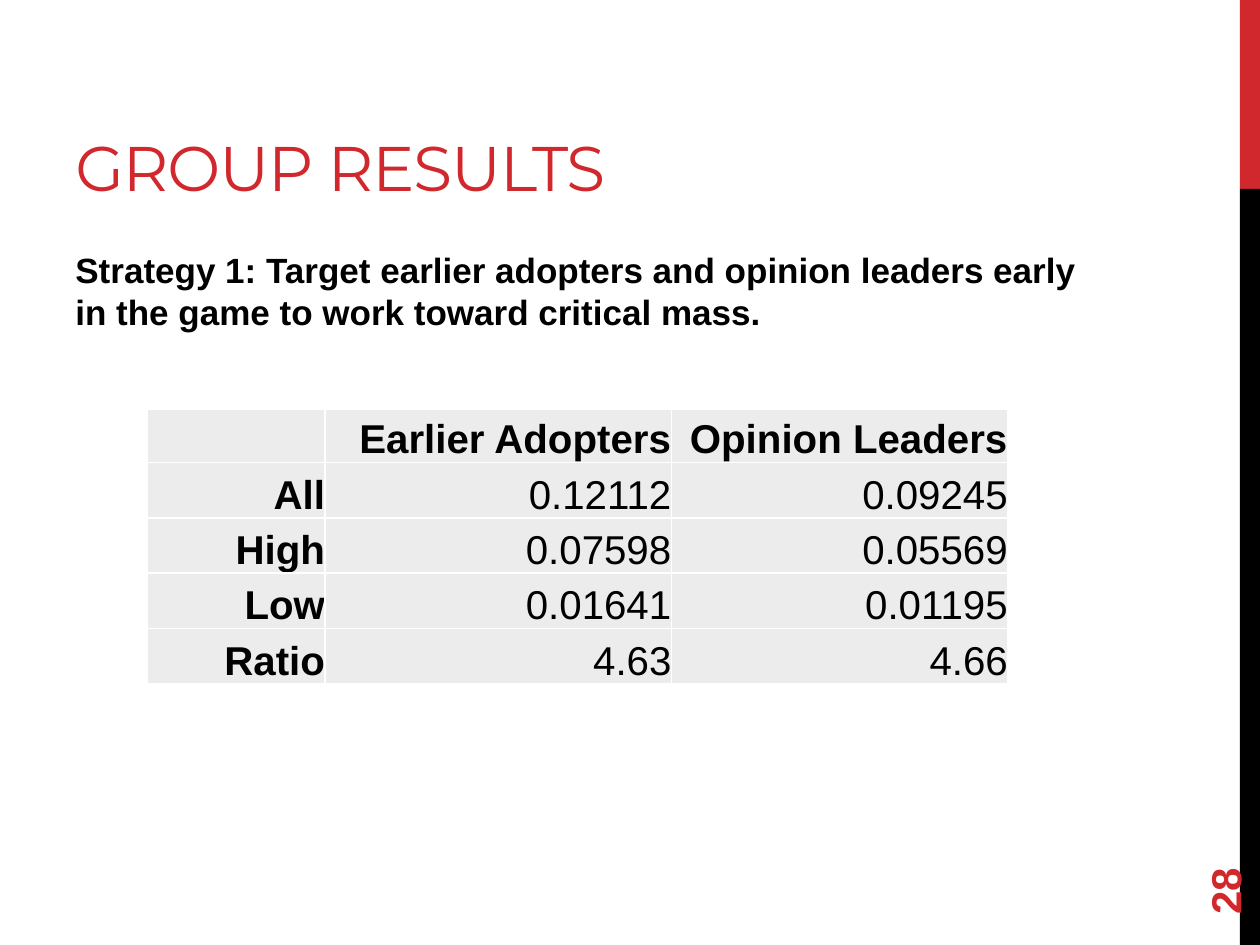
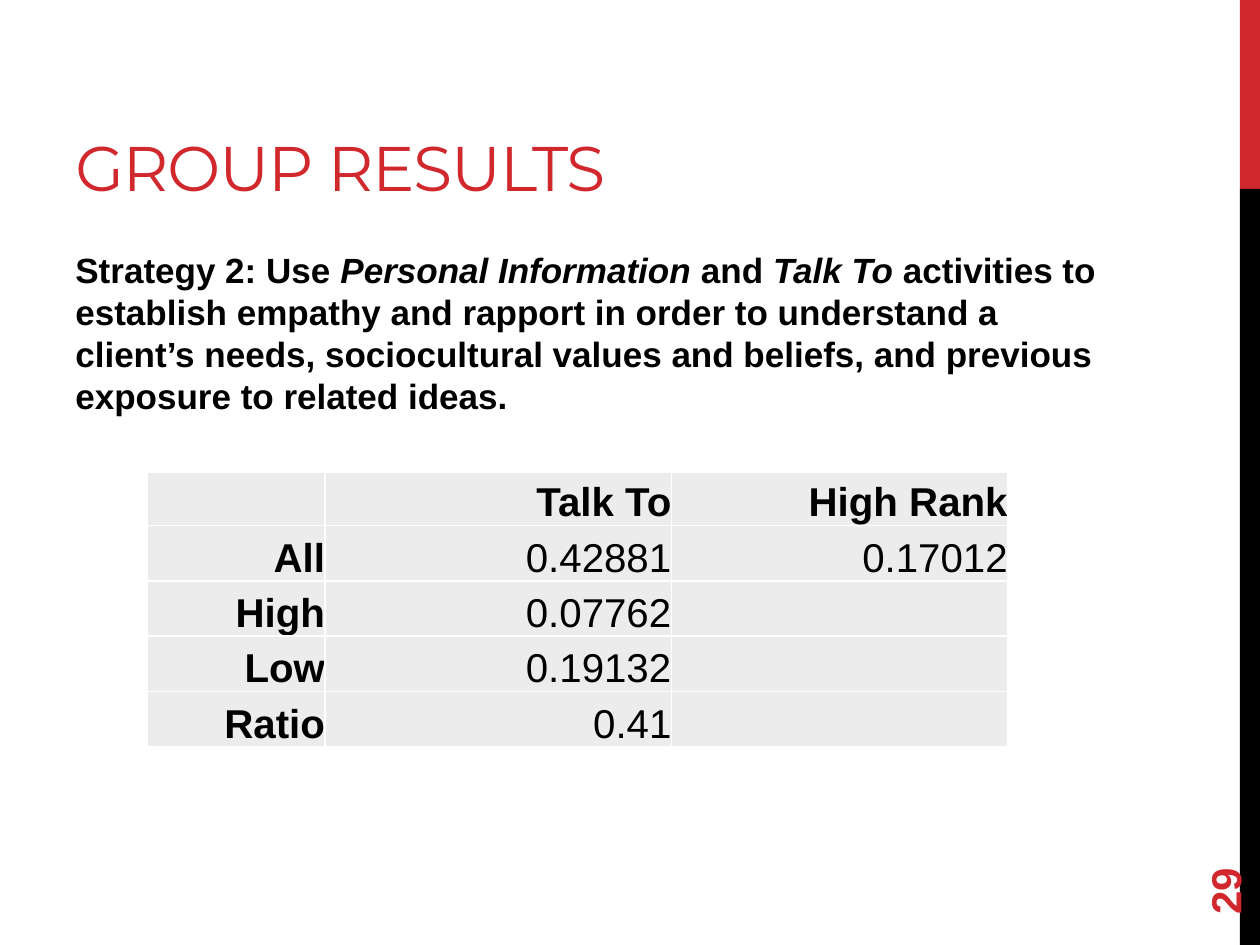
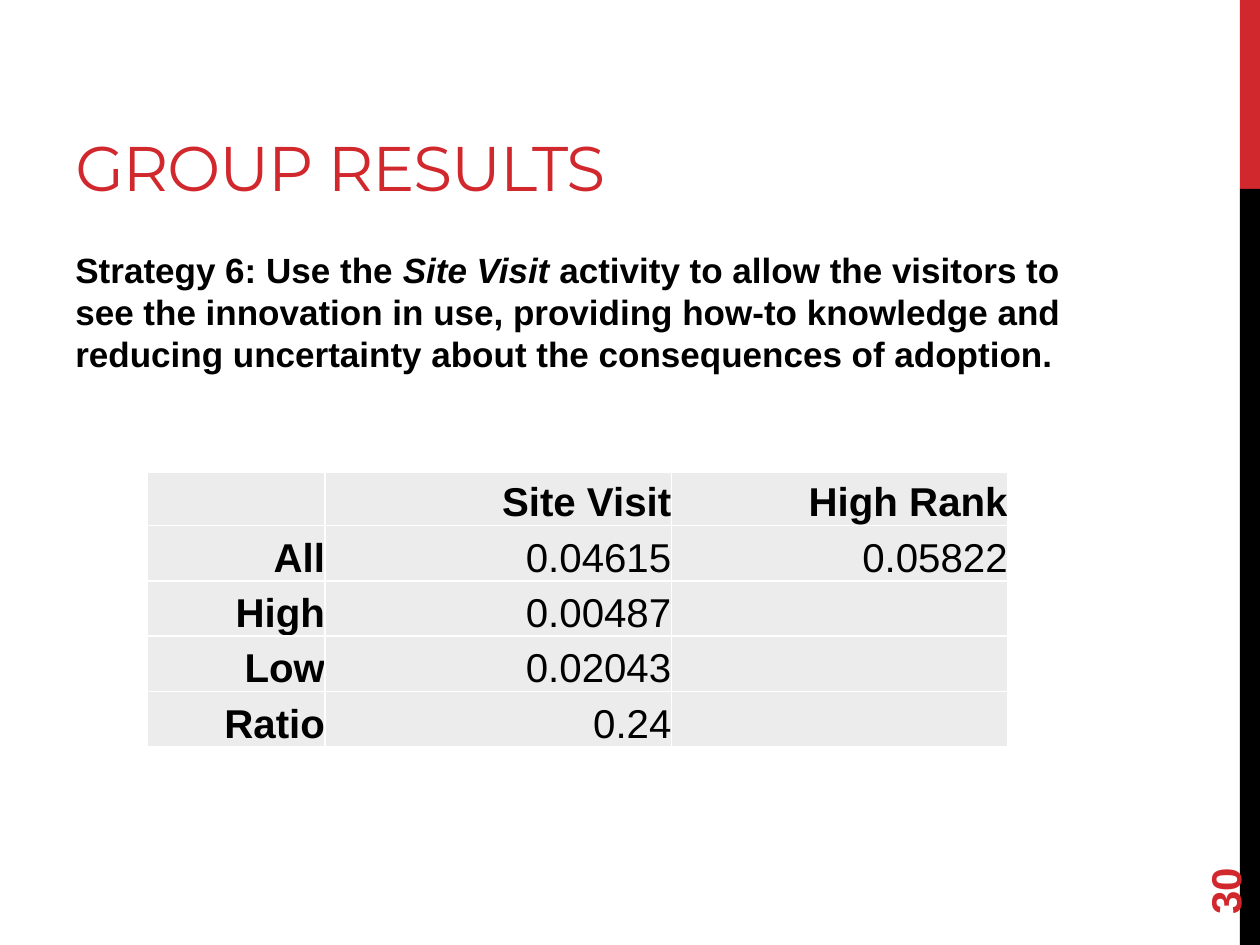
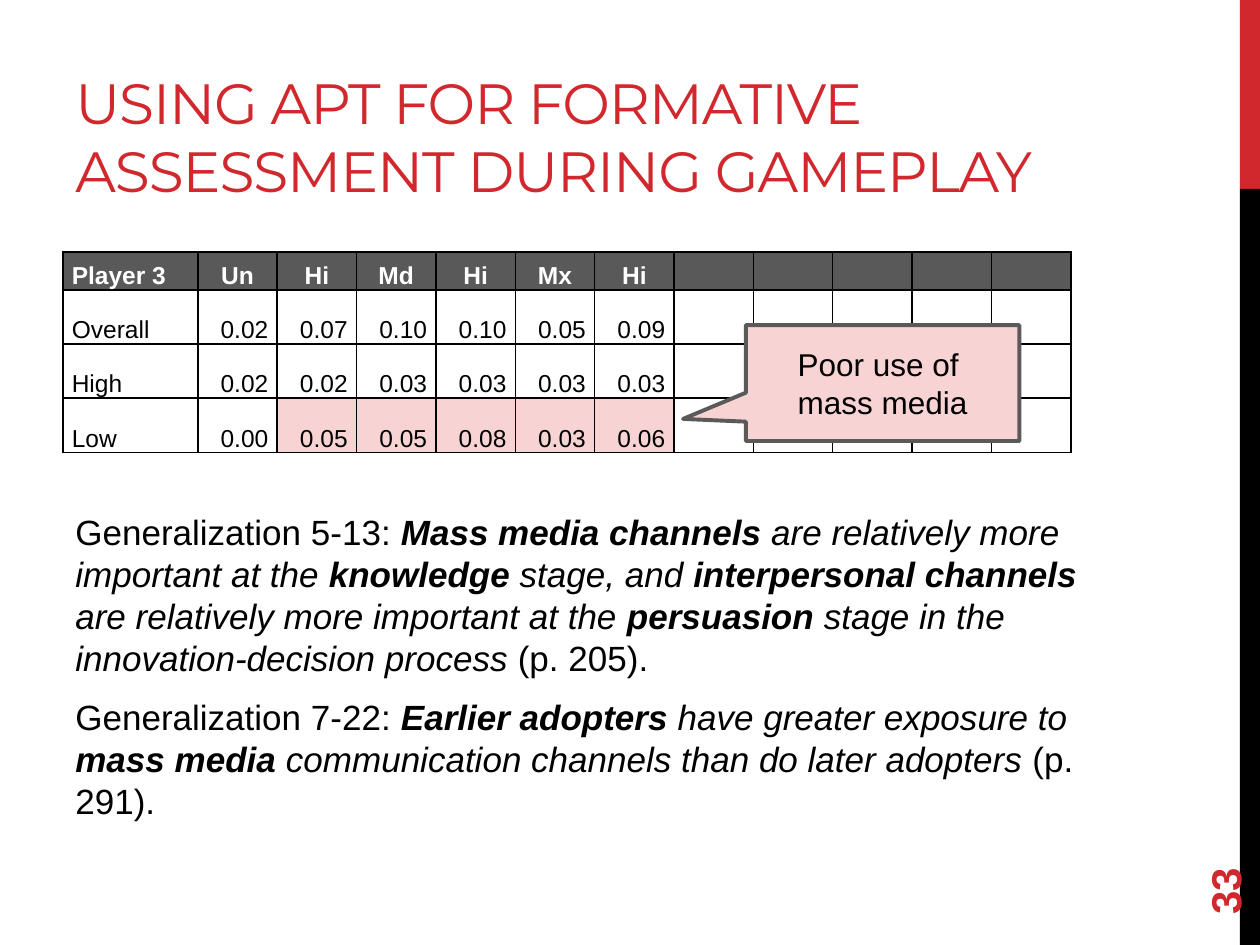
"""Build four slides on group results and formative assessment."""
from dataclasses import dataclass

import lxml.etree
import pptx
import pptx.dml.color
import pptx.enum.shapes
import pptx.enum.text
import pptx.oxml.ns
import pptx.util

Inches = pptx.util.Inches
Pt = pptx.util.Pt
ALIGN = pptx.enum.text.PP_ALIGN
ANCHOR = pptx.enum.text.MSO_ANCHOR
SHAPE = pptx.enum.shapes.MSO_SHAPE


@dataclass(frozen=True)
class Theme:
    """Colours, fonts and type sizes."""
    red: str = "D1282E"
    black: str = "000000"
    white: str = "FFFFFF"
    pale: str = "ECECEC"
    dark: str = "595959"
    outline: str = "5A5A5A"
    pink: str = "F7D3D4"
    heading_font: str = "Montserrat"
    body_font: str = "Arial"
    title: float = 36
    long_title: float = 32.4
    number: float = 24
    result: float = 23
    body: float = 20
    callout: float = 18
    score: float = 14


def rgb(color):
    """Turn a hex string into a colour."""
    return pptx.dml.color.RGBColor.from_string(color)


def write(p, text, size, color=Theme.black, font=Theme.body_font, bold=False, italic=False, spacing=None):
    """Add a formatted run to a paragraph."""
    r = p.add_run()
    r.text = text
    r.font.size = Pt(size)
    r.font.name = font
    r.font.bold = bold
    r.font.italic = italic
    r.font.color.rgb = rgb(color)
    if spacing is not None:
        r.font._element.set("spc", str(round(spacing * 100)))


def set_borders(cell, color):
    """Draw one-point lines on all sides of a cell."""
    tc_pr = cell._tc.get_or_add_tcPr()
    qn = pptx.oxml.ns.qn
    for side in ("a:lnL", "a:lnR", "a:lnT", "a:lnB"):
        ln = lxml.etree.SubElement(tc_pr, qn(side), w=str(Pt(1)))
        fill = lxml.etree.SubElement(ln, qn("a:solidFill"))
        lxml.etree.SubElement(fill, qn("a:srgbClr"), val=color)


class Deck:
    """Hold the style and the current slide."""

    def __init__(self, theme):
        self.theme = theme
        self.prs = pptx.Presentation()
        self.prs.slide_width = Inches(10)
        self.prs.slide_height = Inches(7.5)
        self.s = None

    def slide(self, title, number, title_width=6.83, title_size=Theme.title):
        """Start a slide with its side bands, title and number."""
        t = self.theme
        self.s = self.prs.slides.add_slide(self.prs.slide_layouts[6])
        self.shape(SHAPE.RECTANGLE, 9.84, 0, 0.16, 1.5, t.red)
        self.shape(SHAPE.RECTANGLE, 9.84, 1.5, 0.16, 6, t.black)
        sp = self.box(0.5, 0.17, title_width, 1.5, ANCHOR.BOTTOM)
        write(sp.text_frame.paragraphs[0], title, title_size, t.red, t.heading_font, spacing=-0.6)
        sp = self.box(9, 6.44, 1.44, 0.4, ANCHOR.MIDDLE)
        sp.rotation = 270
        write(sp.text_frame.paragraphs[0], str(number), t.number, t.red, bold=True)

    def shape(self, kind, x, y, w, h, fill, line=None):
        """Add a filled preset shape."""
        sp = self.s.shapes.add_shape(kind, Inches(x), Inches(y), Inches(w), Inches(h))
        sp.shadow.inherit = False
        sp.fill.solid()
        sp.fill.fore_color.rgb = rgb(fill)
        if line:
            sp.line.color.rgb = rgb(line)
            sp.line.width = Pt(2.25)
        else:
            sp.line.fill.background()
        return sp

    def box(self, x, y, w, h, anchor=ANCHOR.TOP):
        """Add an empty wrapping text box."""
        sp = self.s.shapes.add_textbox(Inches(x), Inches(y), Inches(w), Inches(h))
        sp.text_frame.word_wrap = True
        sp.text_frame.vertical_anchor = anchor
        return sp

    def body(self, y, h, paragraphs):
        """Add body paragraphs, each a list of (text, style letters) runs."""
        tf = self.box(0.5, y, 8.33, h).text_frame
        for i, runs in enumerate(paragraphs):
            p = tf.add_paragraph() if i else tf.paragraphs[0]
            p.space_before = Pt(4)
            p.space_after = Pt(6)
            for text, style in runs:
                write(p, text, self.theme.body, bold="b" in style, italic="i" in style)

    def table(self, x, y, cols, rows, values, border, look, margin=0, leading=None):
        """Add a table; look(row, column) gives fill, alignment and text format."""
        frame = self.s.shapes.add_table(len(rows), len(cols), Inches(x), Inches(y),
                                        Inches(sum(cols)), Inches(sum(rows)))
        table = frame.table
        table.first_row = table.horz_banding = False
        for column, width in zip(table.columns, cols):
            column.width = Inches(width)
        for row, height in zip(table.rows, rows):
            row.height = Inches(height)
        for i in range(len(rows)):
            for j in range(len(cols)):
                cell = table.cell(i, j)
                fill, align, style = look(i, j)
                set_borders(cell, border)
                if fill:
                    cell.fill.solid()
                    cell.fill.fore_color.rgb = rgb(fill)
                else:
                    cell.fill.background()
                cell.margin_left = cell.margin_right = Inches(margin)
                cell.margin_top = cell.margin_bottom = 0
                cell.vertical_anchor = ANCHOR.BOTTOM
                p = cell.text_frame.paragraphs[0]
                p.alignment = align
                if leading:
                    p.line_spacing = Pt(leading)
                if j < len(values[i]) and values[i][j]:
                    write(p, values[i][j], **style)

    def results(self, y, heads, columns):
        """Add a table of group results."""
        t = self.theme
        labels = ["All", "High", "Low", "Ratio"]
        values = [["", *heads]] + [list(row) for row in zip(labels, *columns)]

        def look(i, j):
            return t.pale, ALIGN.RIGHT, dict(size=t.result, bold=i == 0 or j == 0)

        self.table(1.17, y, [1.41, 2.75, 2.67], [0.42] + [0.44] * 4, values, t.white, look)

    def scores(self, values):
        """Add the turn-by-turn score table of a player."""
        t = self.theme

        def look(i, j):
            if i == 0:
                align = ALIGN.CENTER if j else ALIGN.LEFT
                return t.dark, align, dict(size=t.score, color=t.white, bold=True)
            poor = i == 3 and 2 <= j <= 6
            return t.pink if poor else None, ALIGN.RIGHT if j else ALIGN.LEFT, dict(size=t.score)

        self.table(0.5, 2, [1.07] + [0.63] * 11, [0.26] + [0.43] * 3, values,
                   t.black, look, margin=0.07, leading=13)

    def callout(self, x, y, w, h, lines, tip):
        """Add a callout whose pointer ends at the given tip."""
        t = self.theme
        sp = self.shape(SHAPE.RECTANGULAR_CALLOUT, x, y, w, h, t.pink, t.outline)
        sp.adjustments[0], sp.adjustments[1] = tip
        tf = sp.text_frame
        tf.word_wrap = True
        tf.vertical_anchor = ANCHOR.MIDDLE
        p = tf.paragraphs[0]
        p.alignment = ALIGN.CENTER
        for i, line in enumerate(lines):
            if i:
                p.add_line_break()
            write(p, line, t.callout)


RESULTS = [
    (28, 3.25,
     [("Strategy 1: Target earlier adopters and opinion leaders early in the game "
       "to work toward critical mass.", "b")],
     ["Earlier Adopters", "Opinion Leaders"],
     [["0.12112", "0.07598", "0.01641", "4.63"], ["0.09245", "0.05569", "0.01195", "4.66"]]),
    (29, 3.75,
     [("Strategy 2: Use ", "b"), ("Personal Information ", "bi"), ("and ", "b"), ("Talk To ", "bi"),
      ("activities to establish empathy and rapport in order to understand a client’s needs, "
       "sociocultural values and beliefs, and previous exposure to related ideas.", "b")],
     ["Talk To", "High Rank"],
     [["0.42881", "0.07762", "0.19132", "0.41"], ["0.17012", "", "", ""]]),
    (30, 3.75,
     [("Strategy 6: Use the ", "b"), ("Site Visit ", "bi"),
      ("activity to allow the visitors to see the innovation in use, providing how-to knowledge "
       "and reducing uncertainty about the consequences of adoption.", "b")],
     ["Site Visit", "High Rank"],
     [["0.04615", "0.00487", "0.02043", "0.24"], ["0.05822", "", "", ""]]),
]

PLAYER_SCORES = [
    ["Player 3", "Un", "Hi", "Md", "Hi", "Mx", "Hi"],
    ["Overall", "0.02", "0.07", "0.10", "0.10", "0.05", "0.09"],
    ["High", "0.02", "0.02", "0.03", "0.03", "0.03", "0.03"],
    ["Low", "0.00", "0.05", "0.05", "0.08", "0.03", "0.06"],
]

GENERALIZATIONS = [
    [("Generalization 5-13: ", ""), ("Mass media channels", "bi"),
     (" are relatively more important at the ", "i"), ("knowledge", "bi"), (" stage, and ", "i"),
     ("interpersonal channels ", "bi"), ("are relatively more important at the ", "i"),
     ("persuasion", "bi"), (" stage in the innovation-decision process", "i"), (" (p. 205).", "")],
    [("Generalization 7-22: ", ""), ("Earlier adopters ", "bi"), ("have greater exposure to ", "i"),
     ("mass media ", "bi"), ("communication channels than do later adopters", "i"),
     (" (p. 291).", "")],
]


def main():
    """Build and save the deck."""
    deck = Deck(Theme())
    for number, table_top, strategy, heads, columns in RESULTS:
        deck.slide("GROUP RESULTS", number)
        deck.body(1.92, 4.92, [strategy])
        deck.results(table_top, heads, columns)

    deck.slide("USING APT FOR FORMATIVE ASSESSMENT DURING GAMEPLAY", 33, 8.67, Theme.long_title)
    deck.body(4, 3, GENERALIZATIONS)
    deck.scores(PLAYER_SCORES)
    deck.callout(5.92, 2.58, 2.17, 0.92, ["Poor use of ", "mass media"], (-0.73, 0.31))
    deck.prs.save("out.pptx")


if __name__ == "__main__":
    main()
